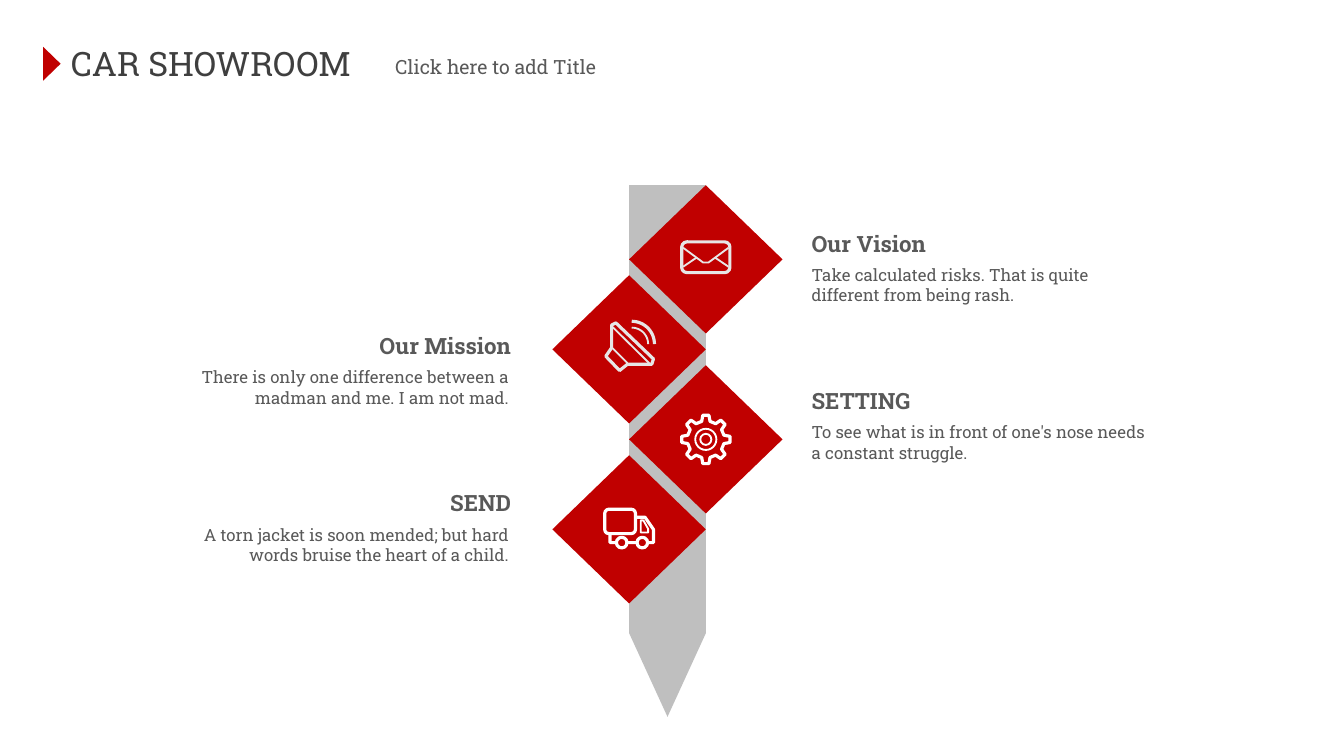
from math import cos, pi, sin

from lxml.etree import SubElement
from pptx import Presentation
from pptx.dml.color import RGBColor
from pptx.enum.shapes import MSO_SHAPE as Kind
from pptx.enum.text import PP_ALIGN as Align
from pptx.oxml.ns import qn
from pptx.util import Cm, Pt


class Theme:
    font = "Roboto Slab"
    red, gray, white, pale = "C00000", "BFBFBF", "FFFFFF", "E7E6E6"
    dark, body = "3F3F3F", "595959"
    title, head, sub, small = 18, 12, 10.5, 9


# Heading, its width and top, body text
STEPS = [
    ("Our Vision", 2.77, 4.22,
     "Take calculated risks. That is quite different from being rash."),
    ("Our Mission", 3.12, 6.15,
     "There is only one difference between a madman and me. I am not mad."),
    ("SETTING", 2.49, 7.19,
     "To see what is in front of one's nose needs a constant struggle."),
    ("SEND", 1.73, 9.12,
     "A torn jacket is soon mended; but hard words bruise the heart of a child."),
]

LEFT, TOP, HALF = 11.89, 3.5, 1.45
TALL, STEP = 2.8, 1.7
BOLD, THIN = 1.7, 1


def arc(x, y, r, start, end, count=16):
    """Points on a circle between two angles in degrees."""
    turns = [(start + (end - start) * i / count) * pi / 180
             for i in range(count + 1)]
    return [(x + r * cos(t), y + r * sin(t)) for t in turns]


def gear(teeth=8, inner=0.35, outer=0.46):
    """Outline of a gear around the origin."""
    pitch = 2 * pi / teeth
    edge = [(-0.29, inner), (-0.16, outer), (0.16, outer), (0.29, inner)]
    return [(r * cos((i + part) * pitch), r * sin((i + part) * pitch))
            for i in range(teeth) for part, r in edge]


# Icon parts in cm from the diamond centre.
# Path: points, pen, closed. Shape: kind, centre, size, pen.
MAIL = [
    (Kind.ROUNDED_RECTANGLE, (0, -0.04), (0.91, 0.58), BOLD),
    ([(-0.43, -0.22), (-0.05, 0.06), (0.05, 0.06), (0.43, -0.22)], THIN, False),
    ([(-0.43, 0.14), (-0.18, -0.03)], THIN, False),
    ([(0.43, 0.14), (0.18, -0.03)], THIN, False),
]
HORN = [
    ([(-0.33, -0.46), (-0.25, -0.5), (0.46, 0.18), (0.43, 0.28), (-0.03, 0.28),
      (-0.18, 0.4), (-0.44, 0.13), (-0.33, -0.03)], BOLD, True),
    ([(-0.31, -0.42), (0.38, 0.26)], THIN, False),
    ([(-0.31, -0.02), (-0.03, 0.26)], THIN, False),
    (arc(0.05, -0.1, 0.43, -90, 0), BOLD, False),
    (arc(0.05, -0.1, 0.31, -90, 0), THIN, False),
]
GEAR = [
    (gear(), BOLD, True),
    (Kind.OVAL, (0, 0), (0.4, 0.4), THIN),
    (Kind.OVAL, (0, 0), (0.21, 0.21), THIN),
]
TRUCK = [
    ([(0.13, -0.23), (0.3, -0.23), (0.46, 0), (0.46, 0.25), (-0.36, 0.25),
      (-0.36, 0.08)], BOLD, False),
    (Kind.ROUNDED_RECTANGLE, (-0.17, -0.15), (0.58, 0.46), BOLD),
    ([(0.22, -0.17), (0.27, -0.17), (0.36, -0.01), (0.36, 0.06),
      (0.22, 0.06)], THIN, True),
    (Kind.OVAL, (-0.14, 0.25), (0.2, 0.2), BOLD),
    (Kind.OVAL, (0.25, 0.25), (0.2, 0.2), BOLD),
]
ICONS = [(MAIL, Theme.pale), (HORN, Theme.pale),
         (GEAR, Theme.white), (TRUCK, Theme.white)]

deck = Presentation()
deck.slide_width, deck.slide_height = Cm(25.4), Cm(14.28)
shapes = deck.slides.add_slide(deck.slide_layouts[6]).shapes


def rgb(code):
    return RGBColor.from_string(code)


def paint(shape, fill=None, ink=None, pen=1):
    shape.shadow.inherit = False
    if fill:
        shape.fill.solid()
        shape.fill.fore_color.rgb = rgb(fill)
    else:
        shape.fill.background()
    if ink:
        shape.line.color.rgb = rgb(ink)
        shape.line.width = Pt(pen)
        SubElement(shape.line._get_or_add_ln(), qn("a:round"))
    else:
        shape.line.fill.background()


def block(kind, x, y, w, h, fill, turn=0):
    shape = shapes.add_shape(kind, Cm(x), Cm(y), Cm(w), Cm(h))
    shape.rotation = turn
    paint(shape, fill)


def write(text, x, y, w, h, size, color=Theme.body, bold=False,
          align=Align.LEFT, wrap=False):
    frame = shapes.add_textbox(Cm(x), Cm(y), Cm(w), Cm(h)).text_frame
    frame.word_wrap = wrap
    para = frame.paragraphs[0]
    para.alignment = align
    run = para.add_run()
    run.text = text
    font = run.font
    font.name, font.size, font.bold = Theme.font, Pt(size), bold
    font.color.rgb = rgb(color)


def draw(icon, x, y, ink):
    for part in icon:
        if isinstance(part[0], list):
            points, pen, closed = part
            spots = [(Cm(x + dx), Cm(y + dy)) for dx, dy in points]
            pencil = shapes.build_freeform(*spots[0])
            pencil.add_line_segments(spots[1:], close=closed)
            paint(pencil.convert_to_shape(), None, ink, pen)
        else:
            kind, (dx, dy), (w, h), pen = part
            shape = shapes.add_shape(kind, Cm(x + dx - w / 2),
                                     Cm(y + dy - h / 2), Cm(w), Cm(h))
            paint(shape, Theme.red, ink, pen)


block(Kind.ISOSCELES_TRIANGLE, 0.66, 1.04, 0.64, 0.33, Theme.red, 90)
write("CAR SHOWROOM", 1.09, 0.69, 5.84, 1.02, Theme.title, Theme.dark)
write("Click here to add Title", 7.22, 0.91, 4.4, 0.71, Theme.sub)

block(Kind.RECTANGLE, LEFT, TOP, HALF, 8.46, Theme.gray)
block(Kind.ISOSCELES_TRIANGLE, LEFT, TOP + 8.46, HALF, 1.58, Theme.gray, 180)

for i, ((head, wide, top, body), (icon, ink)) in enumerate(zip(STEPS, ICONS)):
    right = i % 2 == 0
    mid = LEFT + HALF if right else LEFT
    y = TOP + i * STEP
    block(Kind.DIAMOND, mid - HALF, y, 2 * HALF, TALL, Theme.red)
    draw(icon, mid, y + TALL / 2, ink)
    side = Align.LEFT if right else Align.RIGHT
    write(head, 15.09 if right else 9.91 - wide, top, wide, 0.76,
          Theme.head, bold=True, align=side)
    write(body, 15.09 if right else 3, top + 0.66, 6.86, 1.02,
          Theme.small, align=side, wrap=True)

deck.save("out.pptx")
